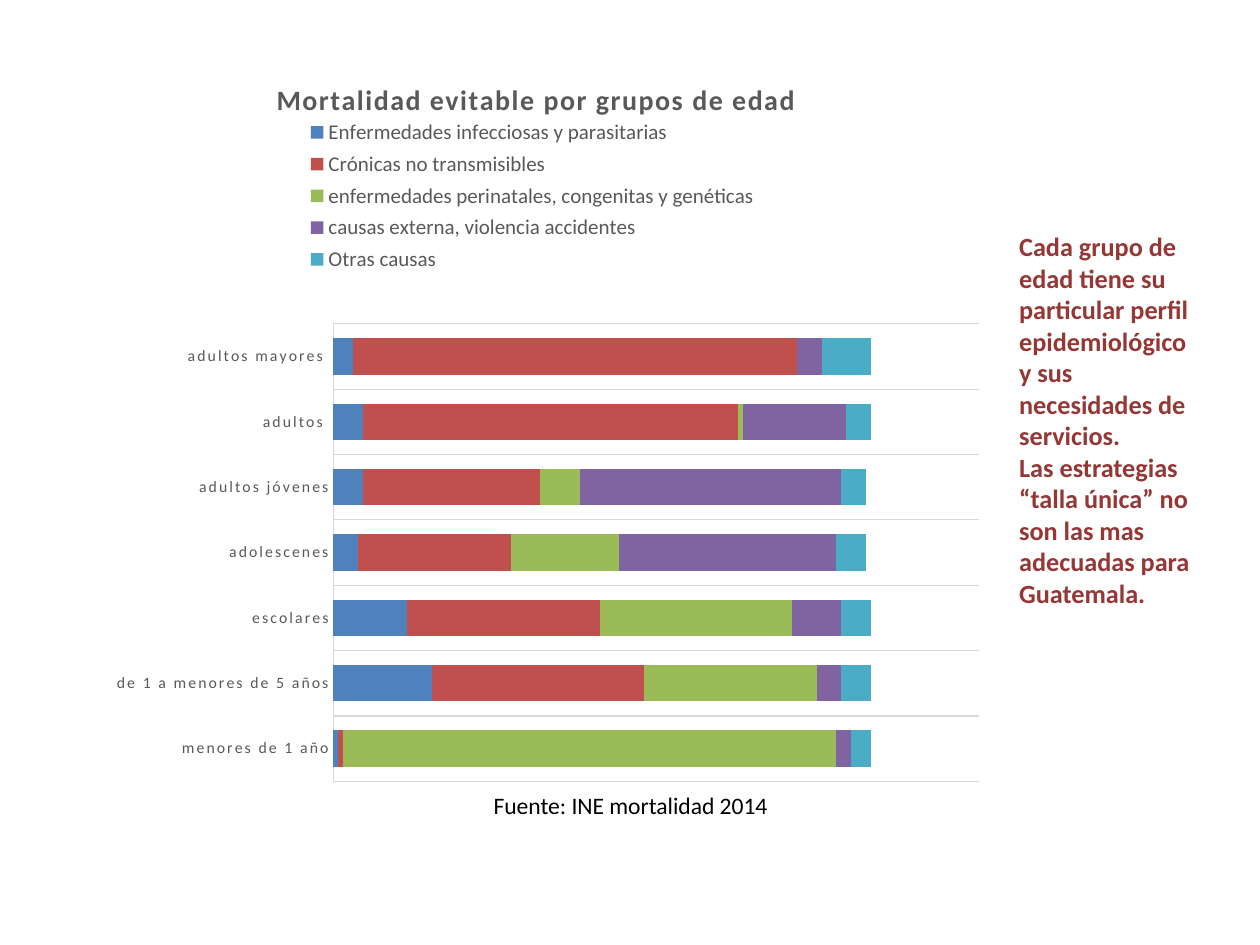
"""Build a slide with a stacked bar chart of avoidable mortality by age group."""
from lxml import etree
from pptx import Presentation
from pptx import util as u
from pptx.chart.data import CategoryChartData
from pptx.dml.color import RGBColor
from pptx.enum import chart as ch, text
from pptx.oxml.ns import qn

GRAY = RGBColor(0x59, 0x59, 0x59)
GRID = RGBColor(0xD9, 0xD9, 0xD9)
MAROON = RGBColor(0x95, 0x37, 0x35)
BLACK = RGBColor(0, 0, 0)
BLUE = RGBColor(0x4F, 0x81, 0xBD)
RED = RGBColor(0xC0, 0x50, 0x4D)
GREEN = RGBColor(0x9B, 0xBB, 0x59)
PURPLE = RGBColor(0x80, 0x64, 0xA2)
TEAL = RGBColor(0x4B, 0xAC, 0xC6)
FONT = "Calibri"


def set_layout(parent, index, target=None, **fractions):
    for old in parent.findall(qn("c:layout")):
        parent.remove(old)
    layout = etree.Element(qn("c:layout"))
    manual = etree.SubElement(layout, qn("c:manualLayout"))
    if target:
        etree.SubElement(manual, qn("c:layoutTarget")).set("val", target)
    for name in ("xMode", "yMode"):
        etree.SubElement(manual, qn("c:" + name)).set("val", "edge")
    for name, value in fractions.items():
        etree.SubElement(manual, qn("c:" + name)).set("val", str(value))
    parent.insert(index, layout)


def style(font, size, color, bold=False):
    font.name = FONT
    font.size = u.Pt(size)
    font.bold = bold
    font.color.rgb = color


prs = Presentation()
prs.slide_width, prs.slide_height = u.Pt(720), u.Pt(540)
s = prs.slides.add_slide(prs.slide_layouts[6])

series = [
    ("Enfermedades infecciosas y parasitarias", BLUE, (1, 20, 15, 5, 6, 6, 4)),
    ("Crónicas no transmisibles", RED, (1, 43, 39, 31, 36, 76, 90)),
    ("enfermedades perinatales, congenitas y genéticas", GREEN, (100, 35, 39, 22, 8, 1, 0)),
    ("causas externa, violencia accidentes", PURPLE, (3, 5, 10, 44, 53, 21, 5)),
    ("Otras causas", TEAL, (4, 6, 6, 6, 5, 5, 10)),
]
data = CategoryChartData()
data.categories = ["menores de 1 año", "de 1 a menores de 5 años", "escolares",
                   "adolescenes", "adultos jóvenes", "adultos ", "adultos mayores "]
for name, color, values in series:
    data.add_series(name, values)

chart = s.shapes.add_chart(ch.XL_CHART_TYPE.BAR_STACKED, u.Pt(54), u.Pt(26),
                           u.Pt(506), u.Pt(430), data).chart
style(chart.font, 10, BLACK)
plot = chart.plots[0]
plot.gap_width = 79
plot.overlap = 100
plot.vary_by_categories = False
for ser, (name, color, values) in zip(plot.series, series):
    ser.format.fill.solid()
    ser.format.fill.fore_color.rgb = color

chart.has_title = True
p = chart.chart_title.text_frame.paragraphs[0]
r = p.add_run()
r.text = "Mortalidad evitable por grupos de edad"
style(r.font, 16, GRAY, True)
r.font._element.set("spc", "100")
title = chart.chart_title._element
set_layout(title, 1, x=0.2, y=0.04)

chart.has_legend = True
legend = chart.legend
legend.position = ch.XL_LEGEND_POSITION.TOP
legend.include_in_layout = False
style(legend.font, 12, GRAY)
set_layout(legend._element, 1, x=0.24, y=0.09, w=0.51, h=0.22)

axis = chart.category_axis
axis.major_tick_mark = axis.minor_tick_mark = ch.XL_TICK_MARK.NONE
axis.has_major_gridlines = True
for line in (axis.format.line, axis.major_gridlines.format.line):
    line.color.rgb = GRID
    line.width = u.Pt(0.75)
style(axis.tick_labels.font, 9, GRAY)
axis.tick_labels.font._element.set("spc", "120")
values_axis = chart.value_axis
values_axis.minimum_scale, values_axis.maximum_scale = 0, 131
values_axis.has_major_gridlines = False
values_axis.visible = False
plot_area = chart._chartSpace.chart.plotArea
set_layout(plot_area, 0, "inner", x=0.27, y=0.37, w=0.73, h=0.608)

boxes = [
    ((575.3, 128.2, 118.8, 225.4), 15, MAROON, True,
     ["Cada grupo de edad tiene su particular perfil epidemiológico y sus necesidades de servicios.",
      "Las estrategias “talla única” no son las mas adecuadas para Guatemala."]),
    ((275, 448.6, 182.9, 23.8), 13.5, BLACK, False, ["Fuente: INE mortalidad 2014"]),
]
for place, size, color, bold, paragraphs in boxes:
    tf = s.shapes.add_textbox(*map(u.Pt, place)).text_frame
    tf.word_wrap = True
    tf.auto_size = text.MSO_AUTO_SIZE.SHAPE_TO_FIT_TEXT
    for i, words in enumerate(paragraphs):
        p = tf.add_paragraph() if i else tf.paragraphs[0]
        r = p.add_run()
        r.text = words
        style(r.font, size, color, bold)

prs.save("out.pptx")
